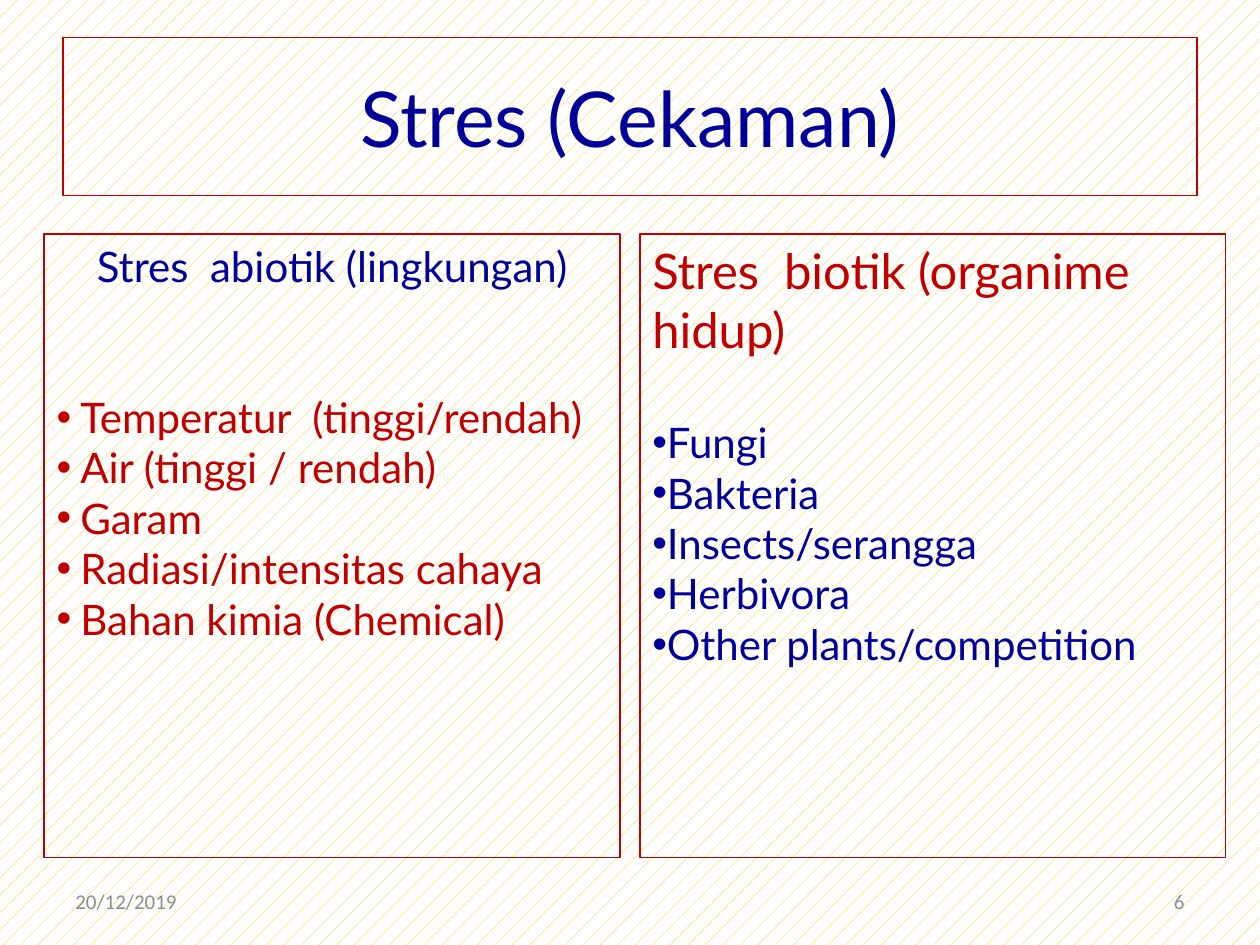
from dataclasses import dataclass

import pptx
import pptx.util
from lxml import etree
from pptx.dml.color import RGBColor
from pptx.enum.dml import MSO_PATTERN
from pptx.enum.shapes import MSO_SHAPE
from pptx.enum.text import MSO_ANCHOR, PP_ALIGN
from pptx.oxml.ns import qn

Cm, Pt = pptx.util.Cm, pptx.util.Pt
NAVY, RED, GREY = "000099", "C00000", "8C8C8C"
TOP, TALL = 4.72, 12.57  # shared by both panels, in cm


@dataclass
class Panel:
    left: float
    width: float
    head: str
    size: int
    align: PP_ALIGN
    ink: str
    items: list[str]
    tint: str
    gap: float  # points between heading and list
    indent: float  # hanging indent of the list, in cm


@dataclass
class Note:
    left: float
    text: str
    align: PP_ALIGN


PANELS = [
    Panel(0.89, 11.61, "Stres  abiotik (lingkungan)", 24, PP_ALIGN.CENTER, NAVY,
          ["Temperatur  (tinggi/rendah)", "Air (tinggi / rendah)", "Garam",
           "Radiasi/intensitas cahaya", "Bahan kimia (Chemical)"],
          RED, 57.6, 0.48),
    Panel(12.9, 11.81, "Stres  biotik (organime hidup)", 28, PP_ALIGN.LEFT, RED,
          ["Fungi", "Bakteria", "Insects/serangga", "Herbivora",
           "Other plants/competition"],
          NAVY, 33.6, 0),
]
NOTES = [
    Note(1.27, "20/12/2019", PP_ALIGN.LEFT),
    Note(18.21, "6", PP_ALIGN.RIGHT),
]


def color(code: str) -> RGBColor:
    return RGBColor.from_string(code)


def write(para, text: str, size: int, ink: str, align: PP_ALIGN, face: str = "Lato") -> None:
    para.alignment = align
    run = para.add_run()
    run.text = text
    run.font.size = Pt(size)
    run.font.name = face
    run.font.color.rgb = color(ink)


def bullet(para, indent: float) -> None:
    props = para._p.get_or_add_pPr()
    props.set("marL", str(Cm(indent)))
    props.set("indent", str(-Cm(indent)))
    etree.SubElement(props, qn("a:buFont")).set("typeface", "Arial")
    etree.SubElement(props, qn("a:buChar")).set("char", "•")


def frame(slide, left: float, top: float, width: float, height: float, anchor: MSO_ANCHOR):
    box = slide.shapes.add_shape(
        MSO_SHAPE.RECTANGLE, Cm(left), Cm(top), Cm(width), Cm(height))
    box.shadow.inherit = False
    box.fill.background()
    box.line.color.rgb = color(RED)
    box.line.width = Pt(0.75)
    body = box.text_frame
    body.word_wrap = True
    body.vertical_anchor = anchor
    return body


def draw_panel(slide, panel: Panel) -> None:
    body = frame(slide, panel.left, TOP, panel.width, TALL, MSO_ANCHOR.TOP)
    write(body.paragraphs[0], panel.head, panel.size, panel.ink, panel.align)
    for i, item in enumerate(panel.items):
        para = body.add_paragraph()
        write(para, item, 24, panel.tint, PP_ALIGN.LEFT)
        para.space_before = Pt(0 if i else panel.gap)
        bullet(para, panel.indent)


def draw_note(slide, note: Note) -> None:
    box = slide.shapes.add_textbox(Cm(note.left), Cm(17.65), Cm(5.92), Cm(1.02))
    body = box.text_frame
    body.word_wrap = True
    body.vertical_anchor = MSO_ANCHOR.MIDDLE
    write(body.paragraphs[0], note.text, 12, GREY, note.align, "Calibri")


def main() -> None:
    deck = pptx.Presentation()
    deck.slide_width, deck.slide_height = Cm(25.4), Cm(19.05)
    slide = deck.slides.add_slide(deck.slide_layouts[6])

    # Patterned background
    fill = slide.background.fill
    fill.patterned()
    fill.pattern = MSO_PATTERN.PERCENT_5
    fill.fore_color.rgb = color("FFC000")
    fill.back_color.rgb = color("FFFFFF")

    # Title
    title = frame(slide, 1.27, 0.76, 22.86, 3.18, MSO_ANCHOR.MIDDLE)
    write(title.paragraphs[0], "Stres (Cekaman)", 44, NAVY, PP_ALIGN.CENTER)

    # Two kinds of stress
    for panel in PANELS:
        draw_panel(slide, panel)

    # Date and page number
    for note in NOTES:
        draw_note(slide, note)

    deck.save("out.pptx")


if __name__ == "__main__":
    main()
